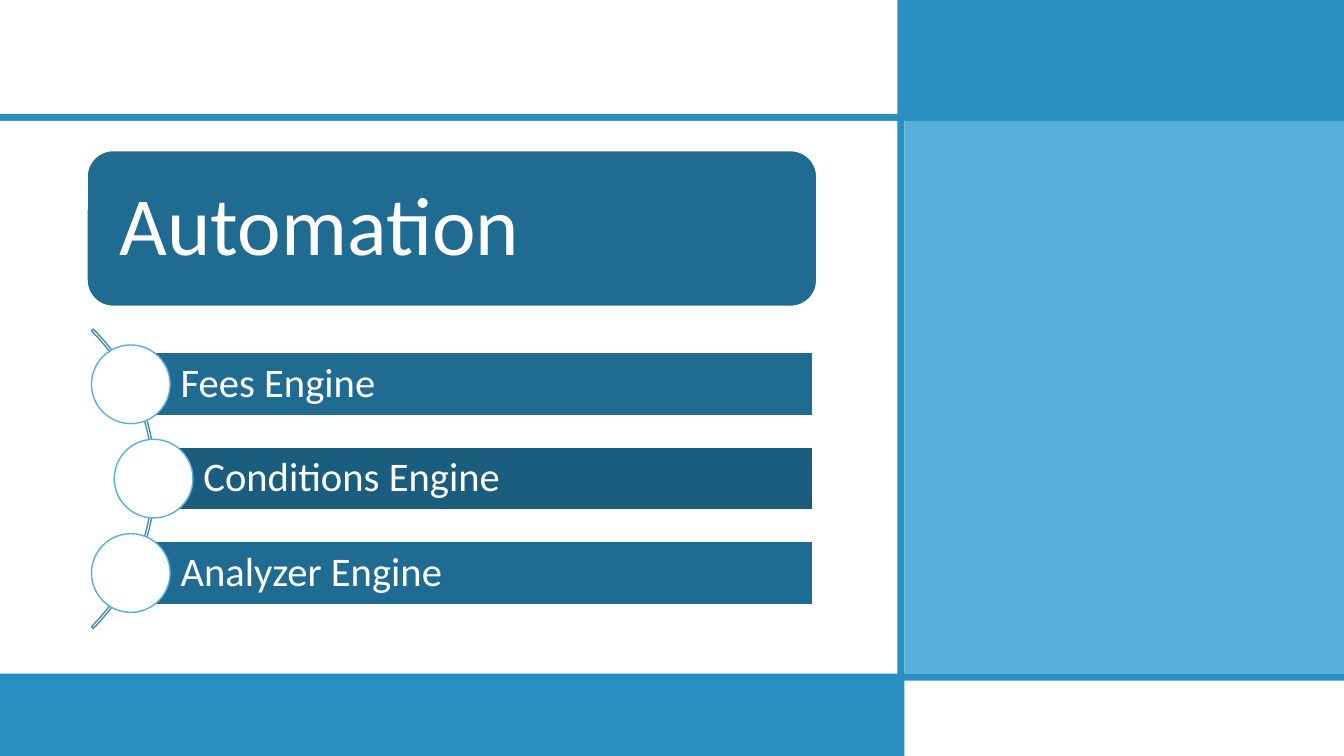
from lxml import etree
from pptx import Presentation
from pptx import util as u
from pptx.dml import color
from pptx.enum import shapes, text
from pptx.oxml import ns

BLUE, SKY, WHITE = "298FC2", "57AFDB", "FFFFFF"
DEEP, DARK, STEEL = "1F6B92", "1B5D7E", "468CAF"
KIND = shapes.MSO_SHAPE


def rgb(code):
    return color.RGBColor.from_string(code)


class Deck:
    font = "Calibri"

    def __init__(self, wide, high):
        self.prs = Presentation()
        self.prs.slide_width = u.Pt(wide)
        self.prs.slide_height = u.Pt(high)
        self.slide = self.prs.slides.add_slide(self.prs.slide_layouts[6])

    def shape(self, kind, box, fill=None, line=None):
        item = self.slide.shapes.add_shape(kind, *[u.Pt(n) for n in box])
        item.shadow.inherit = False
        if fill:
            item.fill.solid()
            item.fill.fore_color.rgb = rgb(fill)
        else:
            item.fill.background()
        if line:
            item.line.color.rgb = rgb(line)
            item.line.width = u.Pt(1)
        else:
            item.line.fill.background()
        return item

    def panel(self, box, fill, alpha=None):
        item = self.shape(KIND.RECTANGLE, box, fill)
        if alpha:
            tint = item.fill._xPr.find(".//" + ns.qn("a:srgbClr"))
            etree.SubElement(tint, ns.qn("a:alpha"), val=str(alpha * 1000))

    def label(self, kind, box, fill, words, size, left, pad):
        item = self.shape(kind, box, fill, WHITE)
        frame = item.text_frame
        frame.word_wrap = True
        frame.vertical_anchor = text.MSO_ANCHOR.MIDDLE
        frame.margin_left = u.Pt(left)
        frame.margin_top = frame.margin_right = frame.margin_bottom = u.Pt(pad)
        frame.text = words
        para = frame.paragraphs[0]
        para.alignment = text.PP_ALIGN.LEFT
        para.line_spacing = 0.9
        font = para.runs[0].font
        font.name, font.size = self.font, u.Pt(size)
        font.color.rgb = rgb(WHITE)

    def arc(self, box, line, turns):
        item = self.shape(KIND.BLOCK_ARC, box, None, line)
        for i, turn in enumerate(turns):
            item.adjustments[i] = turn

    def dot(self, x, y, size):
        box = (x - size / 2, y - size / 2, size, size)
        self.shape(KIND.OVAL, box, WHITE, SKY)


def main():
    deck = Deck(960, 540)

    for box, fill, alpha in (
        ((643.7, 0, 316.3, 83.5), BLUE, None),
        ((0, 81.4, 960, 5), BLUE, None),
        ((-0.7, 86.4, 645.8, 395.3), WHITE, 75),
        ((0, 483.8, 641.5, 56.2), BLUE, None),
        ((645.8, 485.3, 314.2, 54.7), WHITE, 75),
        ((0, 481.2, 960, 5), BLUE, None),
        ((641, 0, 5, 540), BLUE, None),
        ((646, 86.4, 314, 395), SKY, None),
    ):
        deck.panel(box, fill, alpha)

    deck.label(KIND.ROUNDED_RECTANGLE, (62.2, 107.6, 521.2, 111.2),
               DEEP, "Automation", 59, 18, 18)

    deck.arc((-191.5, 190.8, 302.4, 302.4), STEEL, (189, 27, 0.006))

    right, top, high, step = 580.6, 252, 45, 67.4
    engines = (
        ("Fees Engine", 93.4, DEEP),
        ("Conditions Engine", 109.7, DARK),
        ("Analyzer Engine", 93.4, DEEP),
    )
    for i, (name, x, fill) in enumerate(engines):
        y = top + i * step
        deck.label(KIND.RECTANGLE, (x, y, right - x, high),
                   fill, name, 29, 35.6, 5.8)
        deck.dot(x, y + high / 2, 56.2)

    deck.prs.save("out.pptx")


if __name__ == "__main__":
    main()
